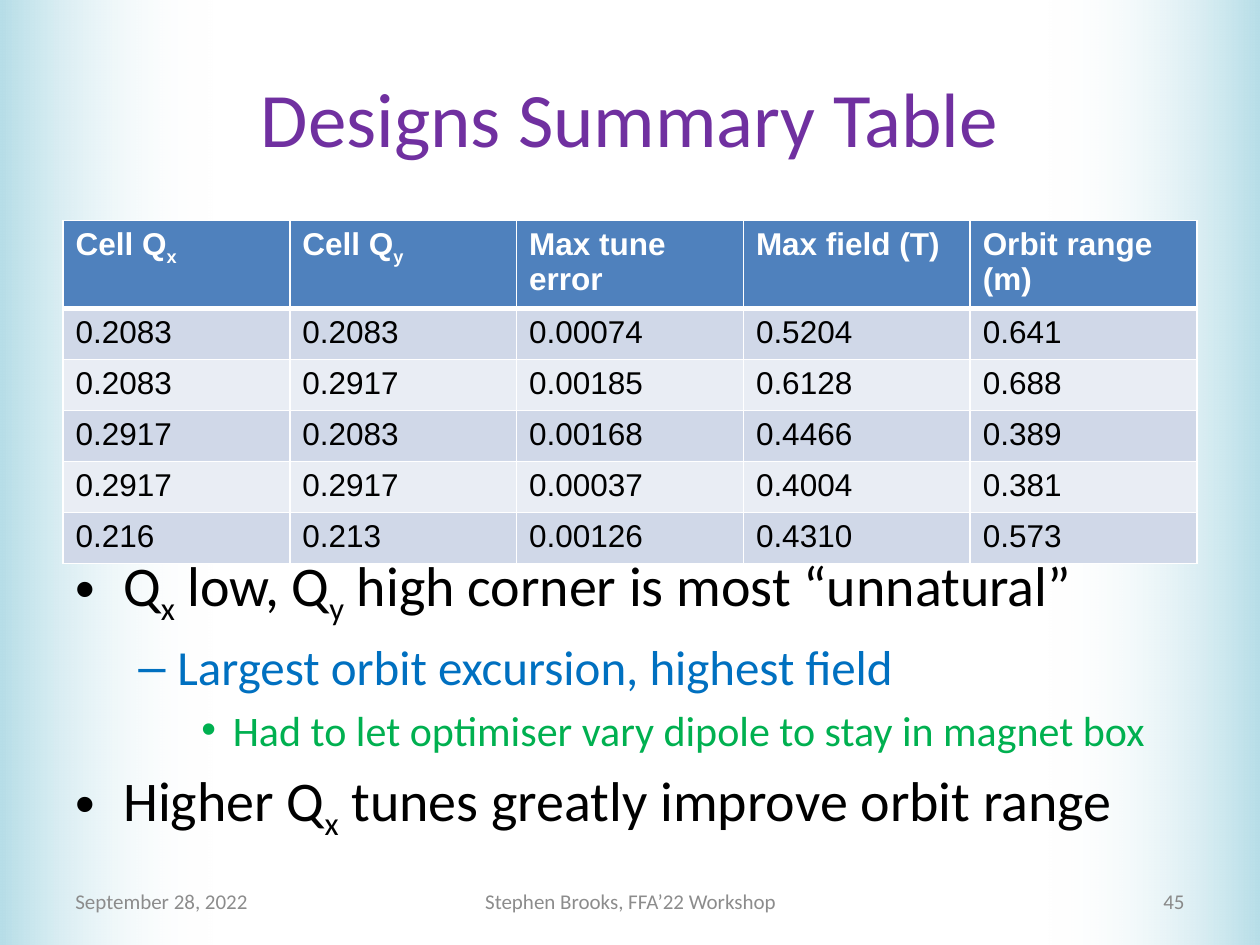
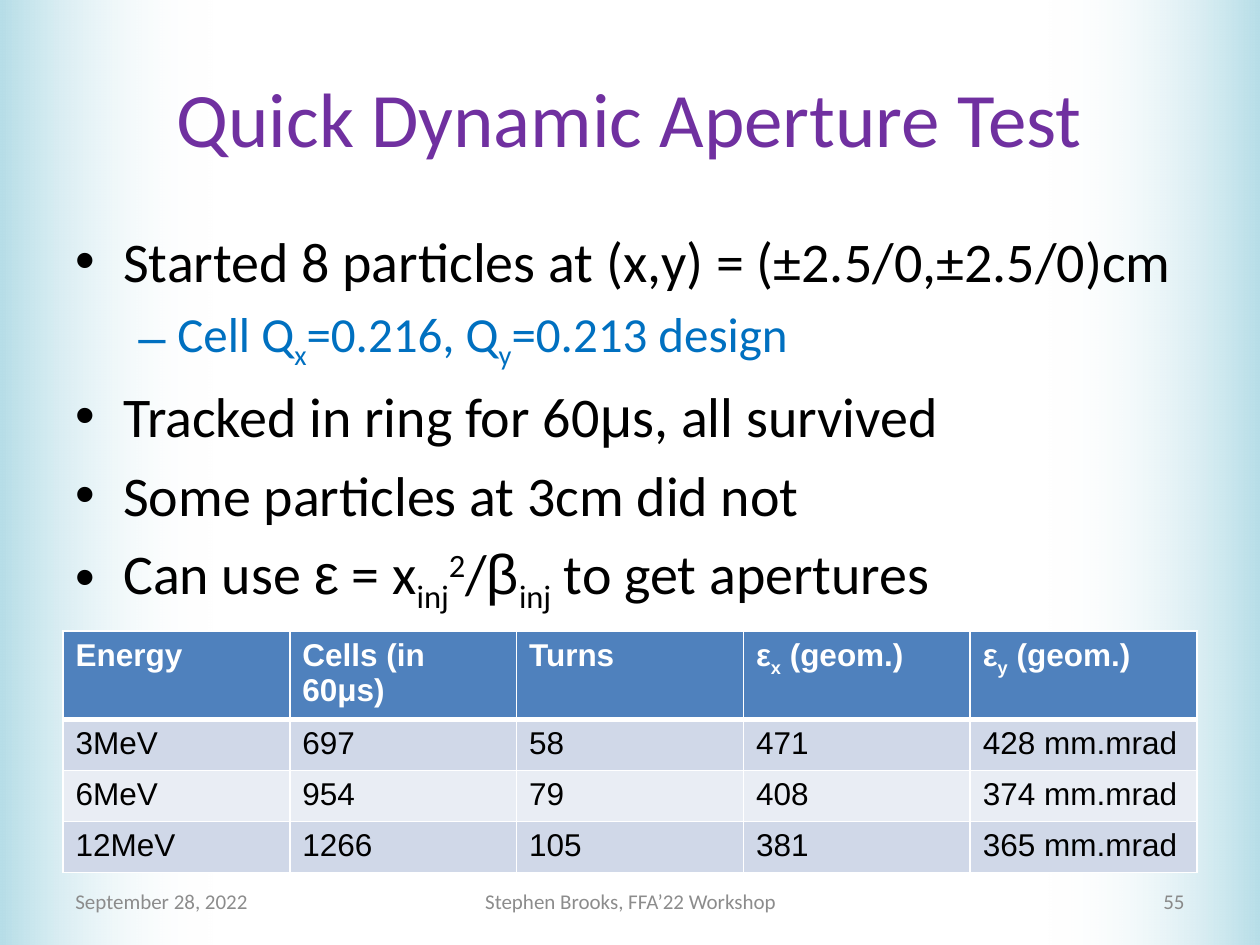
"""Builds two accelerator design slides with tables, bullets and footers."""
from lxml.etree import SubElement
from pptx import Presentation
from pptx.dml.color import RGBColor
from pptx.enum.shapes import MSO_SHAPE
from pptx.enum.text import MSO_ANCHOR, PP_ALIGN
from pptx.oxml.ns import qn
from pptx.util import Inches, Pt

COLORS = {
    "band": "B7DEE8", "white": "FFFFFF", "title": "7030A0", "black": "000000",
    "blue": "0070C0", "green": "00B050", "header": "4F81BD",
    "odd": "D0D8E8", "even": "E9EDF4", "footer": "8C8C8C", "number": "898989",
}
LEVELS = [
    {"size": 32, "color": "black", "mark": "•", "left": 0.38, "hang": 0.38},
    {"size": 28, "color": "blue", "mark": "–", "left": 0.81, "hang": 0.31},
    {"size": 24, "color": "green", "mark": "•", "left": 1.25, "hang": 0.25},
]
BASELINES = {"_": "-25000", "^": "30000"}
LEFT, WIDTH, ROW_HEIGHT = 0.5, 9, 0.405


def rgb(name):
    """Return the named colour."""
    return RGBColor.from_string(COLORS[name])


class SlideBuilder:
    """Holds the deck, its style and the current page."""

    def __init__(self):
        """Start a deck of 10 by 7.5 inch pages."""
        self.deck = Presentation()
        self.deck.slide_width, self.deck.slide_height = Inches(10), Inches(7.5)
        self.layout = self.deck.slide_layouts[5]
        self.page = None

    def add_spans(self, para, text, size, color, name="Calibri", bold=False):
        """Add text split by |, where _ lowers, ^ raises and ~ sets Arial."""
        for part in text.split("|"):
            sign = part[0] if part[0] in "_^~" else ""
            span = para.add_run()
            span.text = part[len(sign):]
            style = {"size": Pt(size), "bold": bold,
                     "name": "Arial" if sign == "~" else name}
            for key, value in style.items():
                setattr(span.font, key, value)
            span.font.color.rgb = rgb(color)
            if sign in BASELINES:
                span.font._element.set("baseline", BASELINES[sign])

    def start_page(self, title, number):
        """Add a page with its title and footers."""
        first = self.page is None
        self.page = self.deck.slides.add_slide(self.layout)
        if first:
            self.share_band(0, 0)
            self.share_band(8.31, 180)
        box = self.page.shapes.title
        place = {"left": LEFT, "top": 0.3, "width": WIDTH, "height": 1.25}
        for key, value in place.items():
            setattr(box, key, Inches(value))
        box.text_frame.vertical_anchor = MSO_ANCHOR.MIDDLE
        para = box.text_frame.paragraphs[0]
        para.alignment = PP_ALIGN.CENTER
        self.add_spans(para, title, 44, "title")
        self.footer("September 28, 2022", LEFT, 2.33, PP_ALIGN.LEFT)
        self.footer("Stephen Brooks, FFA’22 Workshop", 3.42, 3.17, PP_ALIGN.CENTER)
        self.footer(str(number), 7.17, 2.33, PP_ALIGN.RIGHT, "number")

    def share_band(self, left, rotation):
        """Draw a fading side band and move it to the shared layout."""
        band = self.page.shapes.add_shape(
            MSO_SHAPE.RECTANGLE, Inches(left), 0, Inches(1.69), Inches(7.5))
        band.rotation = rotation
        band.shadow.inherit = False
        band.line.fill.background()
        band.fill.gradient()
        band.fill.gradient_angle = 0
        for stop, color in zip(band.fill.gradient_stops, ("band", "white")):
            stop.color.rgb = rgb(color)
        clear = list(band._element.iter(qn("a:srgbClr")))[-1]
        SubElement(clear, qn("a:alpha"), val="0")
        self.layout.shapes._spTree.insert(2, band._element)

    def text_box(self, left, top, width, height):
        """Add a wrapping text box and return its frame."""
        box = self.page.shapes.add_textbox(
            Inches(left), Inches(top), Inches(width), Inches(height))
        box.text_frame.word_wrap = True
        return box.text_frame

    def footer(self, text, left, width, alignment, color="footer"):
        """Add one small text on the footer line."""
        frame = self.text_box(left, 6.95, width, 0.4)
        frame.vertical_anchor = MSO_ANCHOR.MIDDLE
        frame.paragraphs[0].alignment = alignment
        self.add_spans(frame.paragraphs[0], text, 12, color)

    def bullets(self, top, height, items):
        """Add a bulleted list of (level, text) items."""
        frame = self.text_box(LEFT, top, WIDTH, height)
        for index, (level, text) in enumerate(items):
            para = frame.add_paragraph() if index else frame.paragraphs[0]
            style = LEVELS[level]
            para.level = level
            para.space_before = Pt(style["size"] * 0.2)
            props = para._p.get_or_add_pPr()
            props.set("marL", str(Inches(style["left"])))
            props.set("indent", str(-Inches(style["hang"])))
            SubElement(props, qn("a:buFont"), typeface="Arial")
            SubElement(props, qn("a:buChar"), char=style["mark"])
            self.add_spans(para, text, style["size"], style["color"])

    def borders(self, cell, row):
        """Give a cell white borders, heavier below the header."""
        heavy = {0: "lnB", 1: "lnT"}.get(row)
        props = cell._tc.get_or_add_tcPr()
        for side in ("lnL", "lnR", "lnT", "lnB"):
            points = 3 if side == heavy else 1
            line = SubElement(props, qn(f"a:{side}"), w=str(Pt(points)))
            fill = SubElement(line, qn("a:solidFill"))
            SubElement(fill, qn("a:srgbClr"), val=COLORS["white"])

    def table(self, top, rows):
        """Add a banded table whose first row is the header."""
        table = self.page.shapes.add_table(
            len(rows), len(rows[0]), Inches(LEFT), Inches(top),
            Inches(WIDTH), Inches(ROW_HEIGHT * len(rows))).table
        for row, texts in enumerate(rows):
            table.rows[row].height = Inches(ROW_HEIGHT)
            fill = "header" if row == 0 else "odd" if row % 2 else "even"
            for column, text in enumerate(texts):
                cell = table.cell(row, column)
                self.borders(cell, row)
                cell.fill.solid()
                cell.fill.fore_color.rgb = rgb(fill)
                self.add_spans(cell.text_frame.paragraphs[0], text, 18,
                               "black" if row else "white", "Arial", row == 0)


def main():
    """Build both pages and save the deck."""
    builder = SlideBuilder()

    builder.start_page("Designs Summary Table", 45)
    builder.table(1.75, [
        ("Cell Q|_x", "Cell Q|_y", "Max tune error", "Max field (T)", "Orbit range (m)"),
        ("0.2083", "0.2083", "0.00074", "0.5204", "0.641"),
        ("0.2083", "0.2917", "0.00185", "0.6128", "0.688"),
        ("0.2917", "0.2083", "0.00168", "0.4466", "0.389"),
        ("0.2917", "0.2917", "0.00037", "0.4004", "0.381"),
        ("0.216", "0.213", "0.00126", "0.4310", "0.573"),
    ])
    builder.bullets(4.32, 2.38, [
        (0, "Q|_x| low, Q|_y| high corner is most “unnatural”"),
        (1, "Largest orbit excursion, highest field"),
        (2, "Had to let optimiser vary dipole to stay in magnet box"),
        (0, "Higher Q|_x| tunes greatly improve orbit range"),
    ])

    builder.start_page("Quick Dynamic Aperture Test", 55)
    builder.bullets(1.75, 2.79, [
        (0, "Started 8 particles at (x,y) = (±2.5/0,±2.5/0)cm"),
        (1, "Cell Q|_x|=0.216, Q|_y|=0.213 design"),
        (0, "Tracked in ring for 60|~μ|s, all survived"),
        (0, "Some particles at 3cm did not"),
        (0, "Can use |~ε| = x|_inj|^2|/|~β|_inj| to get apertures"),
    ])
    builder.table(5.01, [
        ("Energy", "Cells (in 60μs)", "Turns", "ε|_x| (geom.)", "ε|_y| (geom.)"),
        ("3MeV", "697", "58", "471", "428 mm.mrad"),
        ("6MeV", "954", "79", "408", "374 mm.mrad"),
        ("12MeV", "1266", "105", "381", "365 mm.mrad"),
    ])

    builder.deck.save("out.pptx")


if __name__ == "__main__":
    main()
